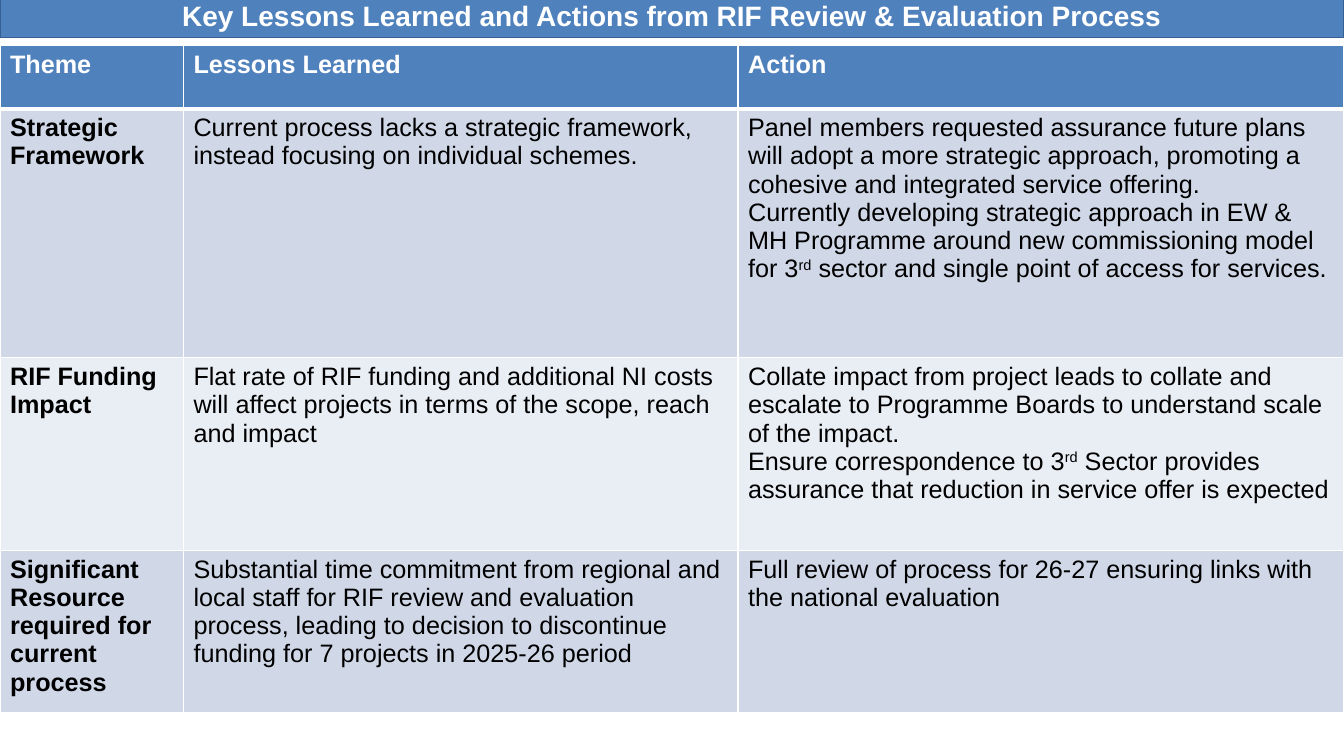
from lxml.etree import SubElement as Sub
from pptx import Presentation
from pptx.dml.color import RGBColor
from pptx.enum.text import MSO_ANCHOR as Anchor, MSO_AUTO_SIZE as Auto, PP_ALIGN as Align
from pptx.oxml.ns import qn
from pptx.util import Inches, Pt

TITLE = "Key Lessons Learned and Actions from RIF Review & Evaluation Process"
# Each cell is a list of paragraphs; text between carets is superscript.
ROWS = [
    (["Theme"], ["Lessons Learned"], ["Action"]),
    (["Strategic Framework"],
     ["Current process lacks a strategic framework, instead focusing on individual schemes."],
     ["Panel members requested assurance future plans will adopt a more strategic approach, "
      "promoting a cohesive and integrated service offering.",
      "Currently developing strategic approach in EW & MH Programme around new commissioning "
      "model for 3^rd^ sector and single point of access for services."]),
    (["RIF Funding Impact"],
     ["Flat rate of RIF funding and additional NI costs will affect projects in terms of the "
      "scope, reach and impact"],
     ["Collate impact from project leads to collate and escalate to Programme Boards to "
      "understand scale of the impact.",
      "Ensure correspondence to 3^rd^ Sector provides assurance that reduction in service "
      "offer is expected"]),
    (["Significant Resource required for current process"],
     ["Substantial time commitment from regional and local staff for RIF review and evaluation "
      "process, leading to decision to discontinue funding for 7 projects in 2025-26 period"],
     ["Full review of process for 26-27 ensuring links with the national evaluation"]),
]
WIDE, HIGH = 13.33, 7.5
COLS = [1.82, 5.5, 6.01]
TALL = [0.63, 2.47, 1.91, 1.61]
HEAD, BANDS = "4F81BD", ["E9EDF4", "D0D8E8"]
WHITE, BLACK, EDGE = "FFFFFF", "000000", "376092"


def paint(fill, color):
    fill.solid()
    fill.fore_color.rgb = RGBColor.from_string(color)


def write(frame, paras, size=18, color=BLACK, bold=False, align=Align.LEFT):
    for i, text in enumerate(paras):
        para = frame.add_paragraph() if i else frame.paragraphs[0]
        para.alignment = align
        for j, part in enumerate(text.split("^")):
            run = para.add_run()
            run.text = part
            font = run.font
            font.name, font.size, font.bold = "Arial", Pt(size), bold
            font.color.rgb = RGBColor.from_string(color)
            if j % 2:
                run._r.get_or_add_rPr().set("baseline", "30000")


def rule(cell, side, width):
    """Draw one white border of a cell; call in the order L, R, T, B."""
    line = Sub(cell._tc.get_or_add_tcPr(), qn(f"a:ln{side}"), w=str(Pt(width)))
    Sub(Sub(line, qn("a:solidFill")), qn("a:srgbClr"), val=WHITE)


def add_title(slide):
    bar = slide.shapes.title
    bar.left, bar.top = 0, Inches(-0.07)
    bar.width, bar.height = Inches(WIDE), Inches(0.44)
    paint(bar.fill, HEAD)
    paint(bar.line.fill, EDGE)
    bar.line.width = Pt(0.75)
    frame = bar.text_frame
    frame.word_wrap, frame.auto_size = True, Auto.NONE
    frame.vertical_anchor = Anchor.MIDDLE
    write(frame, [TITLE], size=20, color=WHITE, bold=True, align=Align.CENTER)


def add_grid(slide):
    grid = slide.shapes.add_table(len(TALL), len(COLS), 0, Inches(0.45),
                                  Inches(WIDE), Inches(sum(TALL))).table
    for col, width in zip(grid.columns, COLS):
        col.width = Inches(width)
    for r, (row, height) in enumerate(zip(ROWS, TALL)):
        grid.rows[r].height = Inches(height)
        for c, paras in enumerate(row):
            cell = grid.cell(r, c)
            widths = {"L": 1, "R": 1, "T": 3 if r == 1 else 1, "B": 1 if r else 3}
            for side, width in widths.items():
                rule(cell, side, width)
            paint(cell.fill, BANDS[r % 2] if r else HEAD)
            write(cell.text_frame, paras, color=BLACK if r else WHITE,
                  bold=r == 0 or c == 0)


def main():
    deck = Presentation()
    deck.slide_width, deck.slide_height = Inches(WIDE), Inches(HIGH)
    slide = deck.slides.add_slide(deck.slide_layouts[5])
    add_title(slide)
    add_grid(slide)
    deck.save("out.pptx")


if __name__ == "__main__":
    main()
